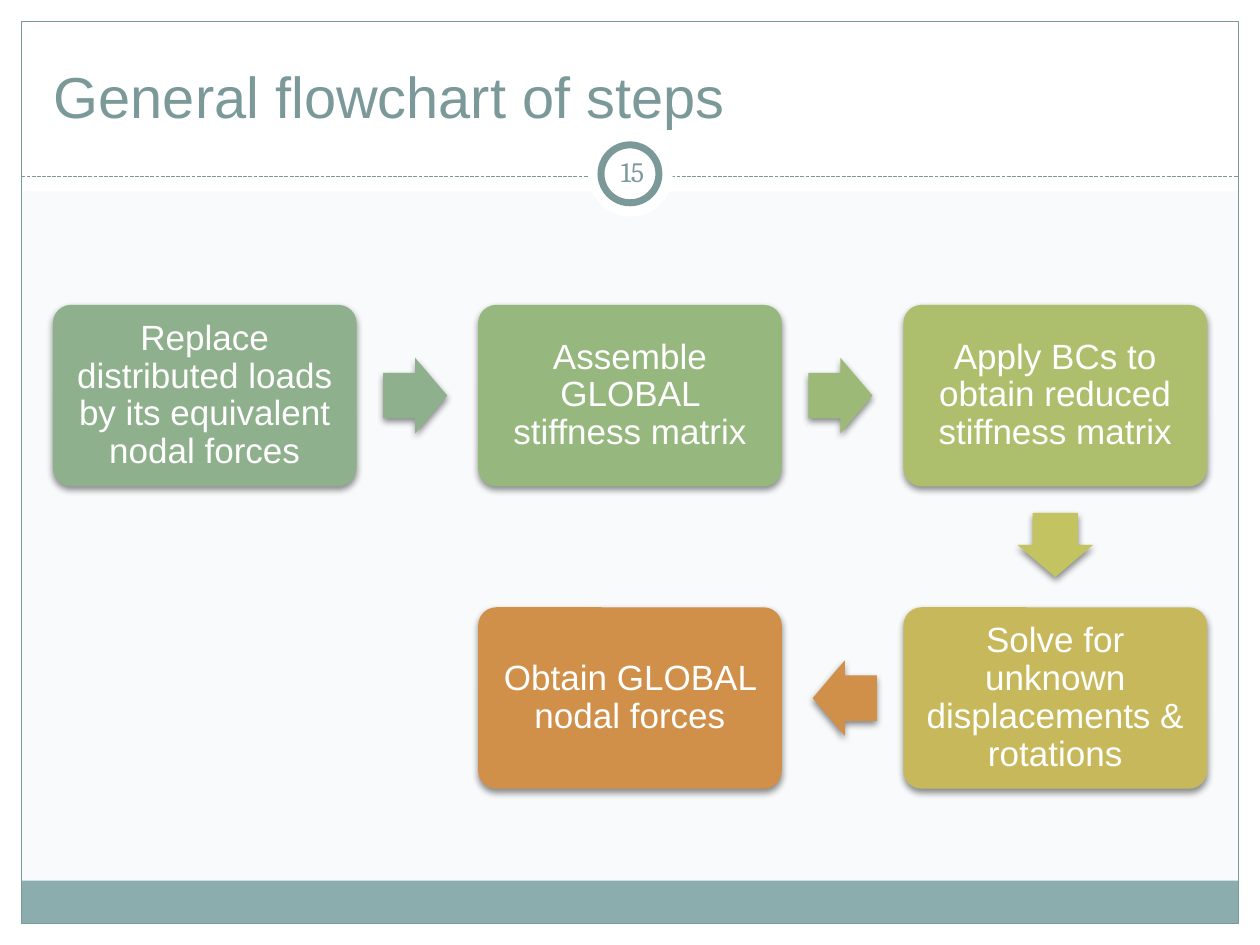
from lxml.etree import SubElement
from pptx import Presentation
from pptx.dml.color import RGBColor
from pptx.enum.dml import MSO_LINE
from pptx.enum.shapes import MSO_CONNECTOR, MSO_SHAPE as Shape
from pptx.enum.text import MSO_ANCHOR as Anchor, PP_ALIGN as Align
from pptx.oxml.ns import qn
from pptx.util import Inches, Pt

TITLE = "General flowchart of steps"
PAGE = "15"
STEPS = [
    ("Replace distributed loads by its equivalent nodal forces", 0, 0, "sage"),
    ("Assemble GLOBAL stiffness matrix", 1, 0, "green"),
    ("Apply BCs to obtain reduced stiffness matrix", 2, 0, "lime"),
    ("Solve for unknown displacements & rotations", 2, 1, "mustard"),
    ("Obtain GLOBAL nodal forces", 1, 1, "orange"),
]
ARROW_COLORS = ["sage", "leaf", "olive", "orange"]
COLORS = {
    "paper": "F8FAFB", "white": "FFFFFF", "teal": "7C999A", "band": "8CADAE",
    "sage": "8FB08C", "green": "96B77D", "leaf": "9CB977", "lime": "ADBF6C",
    "olive": "C4C361", "mustard": "C7B95B", "orange": "D19049", "shadow": "000000",
}
WHITE_MARGINS = [(0, 7.33, 10, 0.17), (0, 0, 10, 1.52),
                 (0, 0, 0.17, 7.5), (9.83, 0, 0.17, 7.5)]
GRID_LEFT, GRID_TOP = 0.42, 2.42
PITCH_X, PITCH_Y = 3.375, 2.4
BOX_W, BOX_H = 2.41, 1.44
ARROW_L, ARROW_W, ARROW_GAP = 0.51, 0.6, 0.21


def color(name):
    return RGBColor.from_string(COLORS[name])


def add_figure(slide, kind, bounds, fill=None, line=None, width=0.75):
    figure = slide.shapes.add_shape(kind, *map(Inches, bounds))
    figure.shadow.inherit = False
    if fill:
        figure.fill.solid()
        figure.fill.fore_color.rgb = color(fill)
    else:
        figure.fill.background()
    if line:
        figure.line.color.rgb = color(line)
        figure.line.width = Pt(width)
    else:
        figure.line.fill.background()
    return figure


def add_shadow(figure):
    effects = figure._element.spPr.find(qn("a:effectLst"))
    shadow = SubElement(effects, qn("a:outerShdw"), blurRad=str(Pt(4)), dist=str(Pt(2)),
                        dir="5400000", rotWithShape="0")
    tint = SubElement(shadow, qn("a:srgbClr"), val=COLORS["shadow"])
    SubElement(tint, qn("a:alpha"), val="45000")


def write(figure, text, size, font, ink, align, anchor, margins):
    frame = figure.text_frame
    frame.word_wrap = True
    frame.vertical_anchor = anchor
    frame.margin_left = frame.margin_right = Inches(margins[0])
    frame.margin_top = frame.margin_bottom = Inches(margins[1])
    frame.text = text
    paragraph = frame.paragraphs[0]
    paragraph.alignment = align
    run_font = paragraph.runs[0].font
    run_font.size, run_font.name = Pt(size), font
    run_font.color.rgb = color(ink)
    return paragraph


def add_frame(slide):
    for bounds in WHITE_MARGINS:
        add_figure(slide, Shape.RECTANGLE, bounds, "white")
    add_figure(slide, Shape.RECTANGLE, (0.17, 6.99, 9.66, 0.34), "band")
    add_figure(slide, Shape.RECTANGLE, (0.17, 0.17, 9.66, 7.16), line="teal")
    divider = slide.shapes.add_connector(
        MSO_CONNECTOR.STRAIGHT, Inches(0.17), Inches(1.4), Inches(9.83), Inches(1.4))
    divider.line.color.rgb = color("teal")
    divider.line.width = Pt(0.75)
    divider.line.dash_style = MSO_LINE.SQUARE_DOT
    SubElement(divider._element.spPr, qn("a:effectLst"))
    add_figure(slide, Shape.OVAL, (4.67, 1.05, 0.67, 0.67), "white")
    add_figure(slide, Shape.OVAL, (4.77, 1.15, 0.46, 0.46), "white", "teal", 4)

    title = slide.shapes.add_textbox(*map(Inches, (0.33, 0.25, 9.33, 0.83)))
    write(title, TITLE, 33, "Arial", "teal", Align.LEFT, Anchor.BOTTOM, (0.1, 0.05))
    number = slide.shapes.add_textbox(*map(Inches, (4.77, 1.12, 0.5, 0.48)))
    write(number, PAGE, 16, "Cambria", "teal", Align.CENTER, Anchor.MIDDLE, (0.05, 0.05))


def add_step(slide, text, column, row, fill):
    bounds = (GRID_LEFT + column * PITCH_X, GRID_TOP + row * PITCH_Y, BOX_W, BOX_H)
    box = add_figure(slide, Shape.ROUNDED_RECTANGLE, bounds, fill)
    box.adjustments[0] = 0.1
    add_shadow(box)
    label = write(box, text, 20, "Arial", "white", Align.CENTER, Anchor.MIDDLE, (0.12, 0.12))
    label.line_spacing = 0.9


def add_arrow(slide, start, end, fill):
    (_, column, row, _), (_, next_column, next_row, _) = start, end
    dx, dy = next_column - column, next_row - row
    reach = ARROW_GAP + ARROW_L / 2
    center_x = GRID_LEFT + column * PITCH_X + BOX_W / 2 + dx * (BOX_W / 2 + reach)
    center_y = GRID_TOP + row * PITCH_Y + BOX_H / 2 + dy * (BOX_H / 2 + reach)
    bounds = (center_x - ARROW_L / 2, center_y - ARROW_W / 2, ARROW_L, ARROW_W)
    arrow = add_figure(slide, Shape.RIGHT_ARROW, bounds, fill)
    arrow.adjustments[0], arrow.adjustments[1] = 0.6, 0.5
    arrow.rotation = {(1, 0): 0, (0, 1): 90, (-1, 0): 180}[dx, dy]
    add_shadow(arrow)


def main():
    """Build the flowchart slide and save it."""
    deck = Presentation()
    deck.slide_width, deck.slide_height = Inches(10), Inches(7.5)
    slide = deck.slides.add_slide(deck.slide_layouts[6])
    slide.background.fill.solid()
    slide.background.fill.fore_color.rgb = color("paper")
    add_frame(slide)
    for step in STEPS:
        add_step(slide, *step)
    for start, end, fill in zip(STEPS, STEPS[1:], ARROW_COLORS):
        add_arrow(slide, start, end, fill)
    deck.save("out.pptx")


if __name__ == "__main__":
    main()
